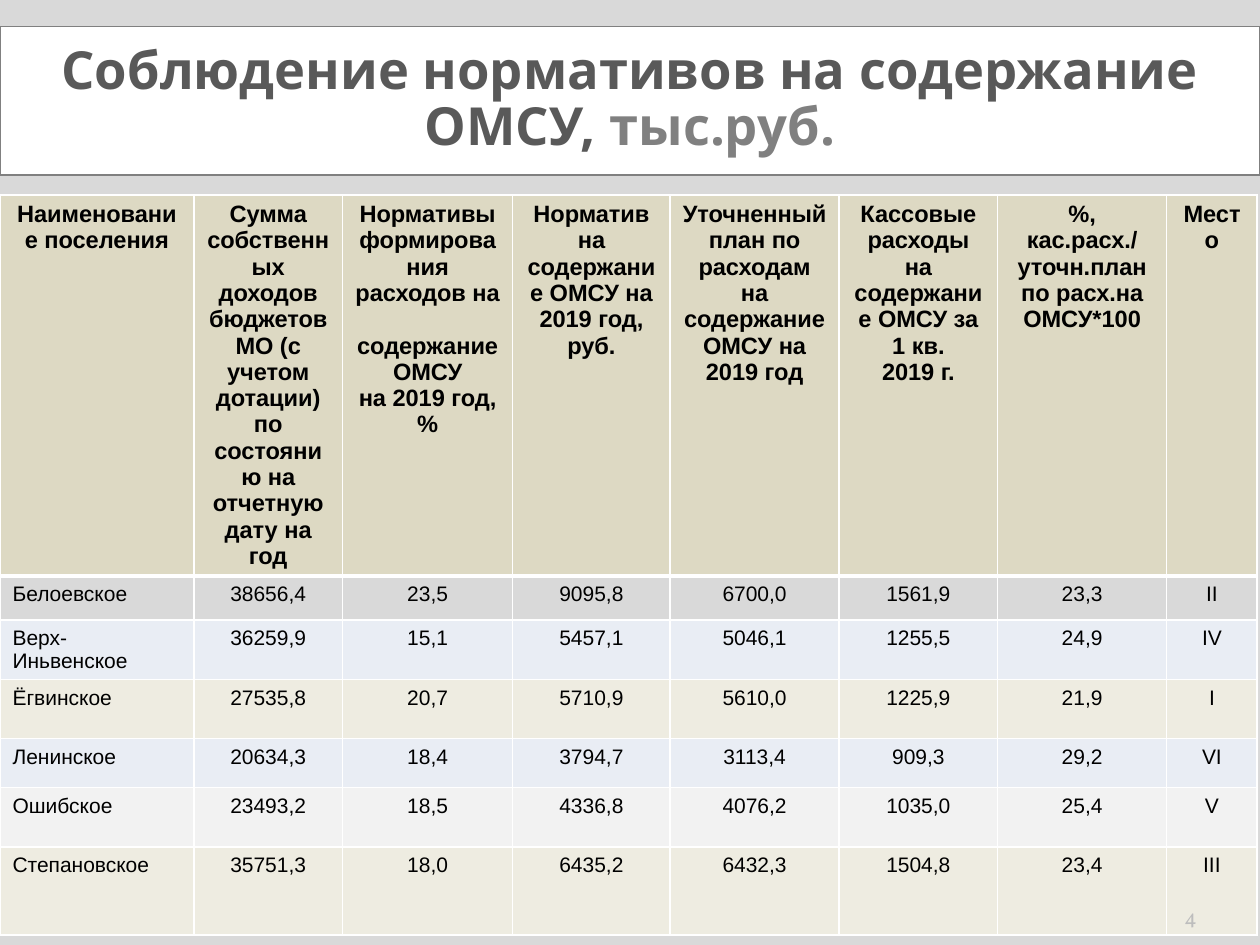
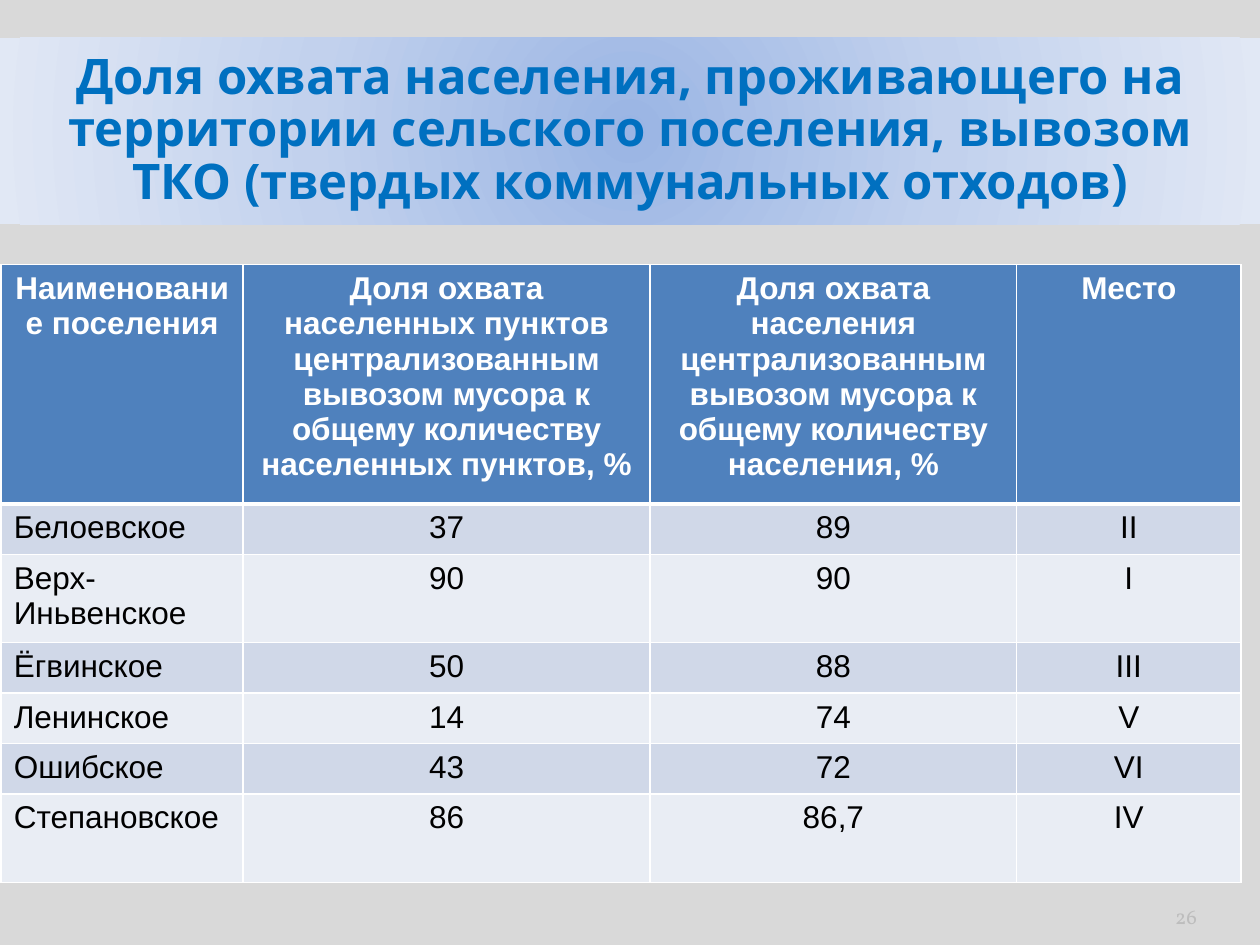
from dataclasses import dataclass

from lxml import etree
from pptx import Presentation
from pptx.dml.color import RGBColor
from pptx.enum.shapes import MSO_SHAPE
from pptx.enum.text import MSO_ANCHOR, PP_ALIGN
from pptx.oxml.ns import qn
from pptx.util import Pt

RECT = MSO_SHAPE.RECTANGLE
LEFT, CENTER, RIGHT = PP_ALIGN.LEFT, PP_ALIGN.CENTER, PP_ALIGN.RIGHT
TOP, MIDDLE, BOTTOM = MSO_ANCHOR.TOP, MSO_ANCHOR.MIDDLE, MSO_ANCHOR.BOTTOM
WIDTH, HEIGHT = 720, 540


@dataclass(frozen=True)
class Theme:
    background: str = "D9D9D9"
    white: str = "FFFFFF"
    black: str = "000000"
    grey: str = "808080"
    dark_grey: str = "595959"
    blue: str = "0070C0"
    number: str = "BDBDBD"
    head_sand: str = "DDD9C3"
    head_blue: str = "4F81BD"
    sand: str = "EEECE1"
    light_grey: str = "F2F2F2"
    pale_blue: str = "E9EDF4"
    band_blue: str = "D0D8E8"
    glow: tuple = ((0, "9AB5E4"), (50, "C2D1ED"), (100, "E1E8F5"))
    title_font: str = "Open Sans"
    table_font: str = "Arial"
    number_font: str = "Vollkorn"
    norms_title_size: float = 30
    waste_title_size: float = 28
    norms_head_size: float = 13.5
    norms_body_size: float = 12
    waste_size: float = 18
    number_size: float = 12


THEME = Theme()


def rgb(value):
    return RGBColor.from_string(value)


def set_radial_fill(sp, stops):
    """Fill a shape with colours running from its centre outwards."""
    sp.fill.gradient()
    grad = sp._element.spPr.find(qn("a:gradFill"))
    for child in list(grad):
        grad.remove(child)
    gs_list = etree.SubElement(grad, qn("a:gsLst"))
    for percent, color in stops:
        gs = etree.SubElement(gs_list, qn("a:gs"), pos=str(percent * 1000))
        etree.SubElement(gs, qn("a:srgbClr"), val=color)
    circle = etree.SubElement(grad, qn("a:path"), path="circle")
    etree.SubElement(circle, qn("a:fillToRect"),
                     {side: "50000" for side in "ltrb"})


def set_borders(cell, color, widths):
    """Draw cell edges; widths maps L, R, T, B, in that order, to points."""
    tc_pr = cell._tc.get_or_add_tcPr()
    for side, width in widths.items():
        ln = etree.SubElement(tc_pr, qn(f"a:ln{side}"), w=str(Pt(width)))
        fill = etree.SubElement(ln, qn("a:solidFill"))
        etree.SubElement(fill, qn("a:srgbClr"), val=color)


class Deck:
    def __init__(self, theme):
        self.theme = theme
        self.prs = Presentation()
        self.prs.slide_width, self.prs.slide_height = Pt(WIDTH), Pt(HEIGHT)
        self.s = None

    def new_slide(self):
        self.s = self.prs.slides.add_slide(self.prs.slide_layouts[6])
        fill = self.s.background.fill
        fill.solid()
        fill.fore_color.rgb = rgb(self.theme.background)

    def write_paragraph(self, p, runs, align, **font):
        """Write (text, colour) runs that share the given font values."""
        p.alignment = align
        for text, color in runs:
            r = p.add_run()
            r.text = text
            r.font.color.rgb = rgb(color)
            for name, value in font.items():
                setattr(r.font, name, value)

    def title(self, top, height, runs, size, gradient=None):
        sp = self.s.shapes.add_shape(RECT, 0, Pt(top), Pt(WIDTH), Pt(height))
        sp.shadow.inherit = False
        if gradient:
            set_radial_fill(sp, gradient)
            sp.line.fill.background()
        else:
            sp.fill.solid()
            sp.fill.fore_color.rgb = rgb(self.theme.white)
            sp.line.color.rgb = rgb(self.theme.grey)
            sp.line.width = Pt(0.75)
        tf = sp.text_frame
        tf.word_wrap, tf.vertical_anchor = True, MIDDLE
        p = tf.paragraphs[0]
        p.line_spacing = 0.9
        self.write_paragraph(p, runs, CENTER, name=self.theme.title_font,
                             size=Pt(size), bold=True)

    def table(self, left, top, height, widths, heights, rows, fills,
              head_color, head_size, body_size):
        """Add a table; a line break in a cell starts a new paragraph."""
        frame = self.s.shapes.add_table(len(rows), len(widths), Pt(left),
                                        Pt(top), Pt(sum(widths)), Pt(height))
        table = frame.table
        for column, width in zip(table.columns, widths):
            column.width = Pt(width)
        for row, row_height in zip(table.rows, heights):
            row.height = Pt(row_height)
        frame.height = Pt(height)
        for i, (values, fill) in enumerate(zip(rows, fills)):
            head = i == 0
            edges = {"L": 1, "R": 1, "T": 3 if i == 1 else 1,
                     "B": 3 if head else 1}
            for j, text in enumerate(values):
                cell = table.cell(i, j)
                set_borders(cell, self.theme.white, edges)
                cell.fill.solid()
                cell.fill.fore_color.rgb = rgb(fill)
                cell.vertical_anchor = TOP
                tf = cell.text_frame
                for k, line in enumerate(text.split("\n")):
                    p = tf.add_paragraph() if k else tf.paragraphs[0]
                    self.write_paragraph(
                        p, [(line, head_color if head else self.theme.black)],
                        CENTER if head or j else LEFT,
                        name=self.theme.table_font, bold=head,
                        size=Pt(head_size if head else body_size))
        return table

    def page_number(self, number):
        sp = self.s.shapes.add_textbox(Pt(624), Pt(505.5), Pt(60), Pt(28.8))
        tf = sp.text_frame
        tf.word_wrap, tf.vertical_anchor = True, BOTTOM
        tf.margin_left = tf.margin_right = 0
        self.write_paragraph(tf.paragraphs[0],
                             [(str(number), self.theme.number)], RIGHT,
                             name=self.theme.number_font,
                             size=Pt(self.theme.number_size))


SETTLEMENTS = ["Белоевское", "Верх-Иньвенское", "Ёгвинское", "Ленинское",
               "Ошибское", "Степановское"]

NORMS_HEAD = [
    "Наименование поселения",
    "Сумма собственных доходов бюджетов МО (с учетом дотации) "
    "по состоянию на отчетную дату на год",
    "Нормативы формирования расходов на\nсодержание ОМСУ\nна 2019 год,%",
    "Норматив на содержание ОМСУ на 2019 год, руб.",
    "Уточненный план по расходам на содержание ОМСУ на 2019 год",
    "Кассовые расходы на содержание ОМСУ за 1 кв.\n2019 г.",
    "%, кас.расх./\nуточн.план по расх.на ОМСУ*100",
    "Место",
]
NORMS = [
    ["38656,4", "23,5", "9095,8", "6700,0", "1561,9", "23,3", "II"],
    ["36259,9", "15,1", "5457,1", "5046,1", "1255,5", "24,9", "IV"],
    ["27535,8", "20,7", "5710,9", "5610,0", "1225,9", "21,9", "I"],
    ["20634,3", "18,4", "3794,7", "3113,4", "909,3", "29,2", "VI"],
    ["23493,2", "18,5", "4336,8", "4076,2", "1035,0", "25,4", "V"],
    ["35751,3", "18,0", "6435,2", "6432,3", "1504,8", "23,4", "III"],
]

WASTE_HEAD = [
    "Наименование поселения",
    "Доля охвата населенных пунктов централизованным вывозом мусора "
    "к общему количеству населенных пунктов, %",
    "Доля охвата населения централизованным вывозом мусора "
    "к общему количеству населения, %",
    "Место",
]
WASTE = [["37", "89", "II"], ["90", "90", "I"], ["50", "88", "III"],
         ["14", "74", "V"], ["43", "72", "VI"], ["86", "86,7", "IV"]]


def with_settlements(head, values):
    return [head] + [[name, *row] for name, row in zip(SETTLEMENTS, values)]


def norms_slide(deck):
    t = deck.theme
    deck.new_slide()
    deck.title(15, 85, [("Соблюдение нормативов на содержание ОМСУ, ",
                         t.dark_grey), ("тыс.руб.", t.grey)],
               t.norms_title_size)
    table = deck.table(
        0, 111.5, 413.3, [110.8, 85, 97.2, 90, 96.5, 90.7, 96.5, 51.8],
        [108, 25.2, 33.8, 33.8, 28, 33.8, 50.4],
        with_settlements(NORMS_HEAD, NORMS),
        [t.head_sand, t.background, t.pale_blue, t.sand, t.pale_blue,
         t.light_grey, t.sand],
        t.black, t.norms_head_size, t.norms_body_size)
    table.cell(0, 2).text_frame.paragraphs[1].space_before = Pt(15)
    deck.page_number(4)


def waste_slide(deck):
    t = deck.theme
    deck.new_slide()
    deck.title(21.6, 106.6,
               [("Доля охвата населения, проживающего на территории сельского "
                 "поселения, вывозом ТКО (твердых коммунальных отходов)",
                 t.blue)], t.waste_title_size, t.glow)
    deck.table(0.7, 151.2, 352.8, [138.2, 232.6, 209.5, 128.2],
               [136.8, 28.8, 50.4, 28.8, 28.8, 28.8, 50.4],
               with_settlements(WASTE_HEAD, WASTE),
               [t.head_blue] + [t.band_blue, t.pale_blue] * 3,
               t.white, t.waste_size, t.waste_size)
    deck.page_number(26)


def main():
    deck = Deck(THEME)
    norms_slide(deck)
    waste_slide(deck)
    deck.prs.save("out.pptx")


if __name__ == "__main__":
    main()
